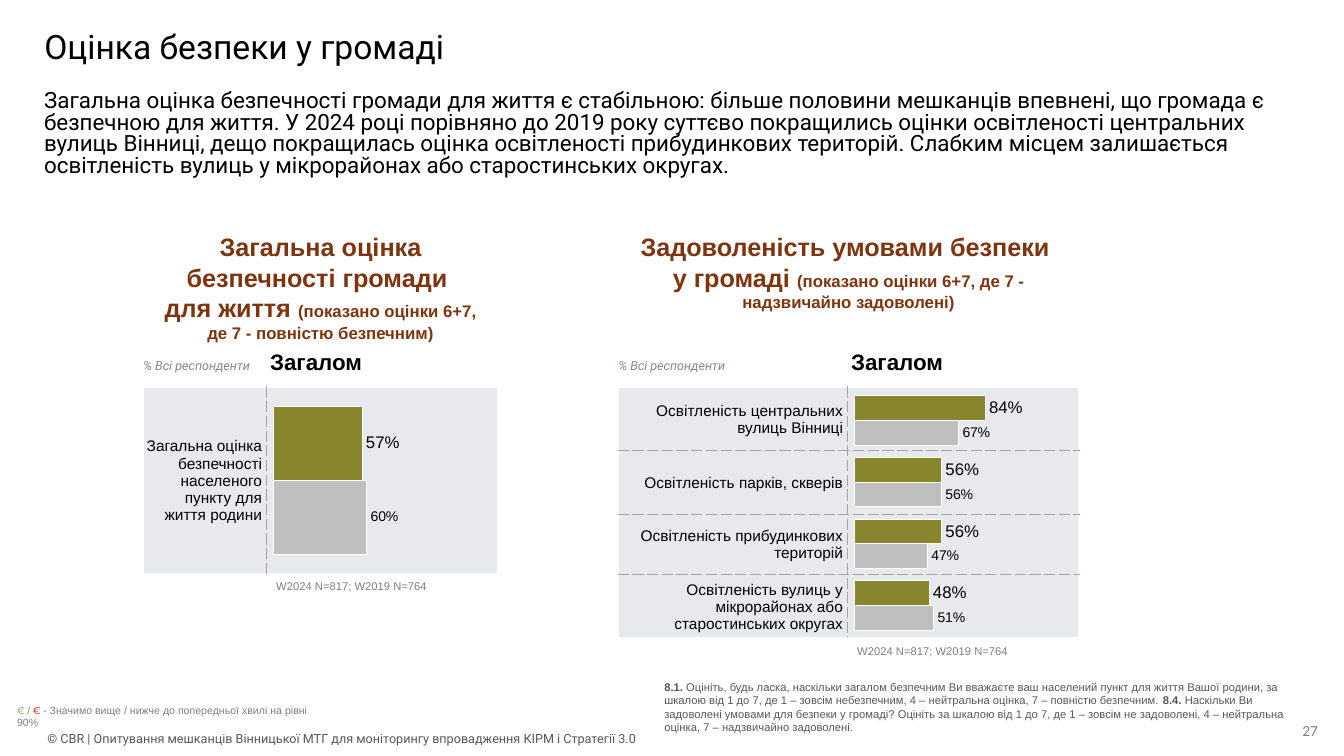
from lxml.etree import SubElement
from pptx import Presentation
from pptx.chart.data import CategoryChartData
from pptx.dml.color import RGBColor
from pptx.enum.chart import XL_CHART_TYPE, XL_LABEL_POSITION
from pptx.enum.shapes import MSO_SHAPE
from pptx.enum.text import MSO_ANCHOR, PP_ALIGN
from pptx.oxml import parse_xml
from pptx.oxml.ns import nsdecls, qn
from pptx.util import Inches, Pt

WIDE, HIGH = Inches(13.33), Inches(7.5)
COLORS = {
    "black": "000000", "white": "FFFFFF", "dark": "585858", "grey": "7F7F7F",
    "warm": "8E8581", "brown": "7F340D", "band": "E7E9EC", "dash": "A5A5A5",
    "olive": "87852D", "silver": "BFBFBF", "green": "6BAB4F", "red": "FF0000",
}
PAD = (0.1, 0.05, 0.1, 0.05)
FLAT = (0, 0, 0, 0)
NAME = (0.01, 0.01, 0.04, 0)


def color(key):
    return RGBColor.from_string(COLORS[key])


def place(left, top, width, height):
    return [round(share * side / 100) for share, side in
            zip((left, top, width, height), (WIDE, HIGH, WIDE, HIGH))]


def style(font, size, key="black", face="Arial", bold=False, italic=False):
    font.size, font.name = Pt(size), face
    font.bold, font.italic = bold, italic
    font.color.rgb = color(key)


def write(holder, parts, pad=PAD, align=PP_ALIGN.LEFT, anchor=MSO_ANCHOR.MIDDLE):
    frame = getattr(holder, "text_frame", holder)
    owner = holder if hasattr(holder, "margin_left") else frame
    owner.margin_left, owner.margin_top, owner.margin_right, owner.margin_bottom = map(Inches, pad)
    owner.vertical_anchor = anchor
    if owner is frame:
        frame.word_wrap = True
    para = frame.paragraphs[0]
    para.alignment = align
    for text, *look in parts:
        if text == "\v":
            para.add_line_break()
            continue
        run = para.add_run()
        run.text = text
        style(run.font, *look)
    return para


def label(slide, box, parts, **kwargs):
    return write(slide.shapes.add_textbox(*place(*box)), parts, **kwargs)


def border(cell, sides):
    props = cell._tc.get_or_add_tcPr()
    for spot, (side, inner) in enumerate(sides):
        key, width, dash = ("dash", 0.75, "lgDash") if inner else ("white", 1, "solid")
        props.insert(spot, parse_xml(
            f'<a:{side} {nsdecls("a")} w="{Pt(width)}"><a:solidFill>'
            f'<a:srgbClr val="{COLORS[key]}"/></a:solidFill>'
            f'<a:prstDash val="{dash}"/></a:{side}>'))


def table(slide, left, top, cols, rows):
    box = place(left, top, sum(cols), sum(rows))
    grid = slide.shapes.add_table(len(rows), len(cols), *box).table
    grid.first_row = grid.horz_banding = False
    for col, width in zip(grid.columns, cols):
        col.width = round(width * WIDE / 100)
    for row, height in zip(grid.rows, rows):
        row.height = round(height * HIGH / 100)
    return grid


def caption(slide, left, top, height, part, pad):
    cell = table(slide, left, top, [16.2], [height]).cell(0, 0)
    cell.fill.background()
    write(cell, [part], pad=pad)


def bands(slide, left, top, cols, rows, names):
    grid = table(slide, left, top, cols, rows)
    last = len(rows) - 1
    for r, name in enumerate(names):
        for c in range(2):
            cell = grid.cell(r, c)
            cell.fill.solid()
            cell.fill.fore_color.rgb = color("band")
            border(cell, [("lnL", c == 1), ("lnR", c == 0), ("lnT", r > 0), ("lnB", r < last)])
        write(grid.cell(r, 0), [(name, 11)], pad=NAME, align=PP_ALIGN.RIGHT)


def bars(slide, box, waves):
    data = CategoryChartData(number_format="0%")
    data.categories = [str(n + 1) for n in range(len(waves[0]))]
    for n, values in enumerate(waves, 1):
        data.add_series(f"Series {n}", values)
    chart = slide.shapes.add_chart(XL_CHART_TYPE.BAR_CLUSTERED, *place(*box), data).chart
    chart.has_legend = chart.has_title = False
    style(chart.font, 12)
    names, scale = chart.category_axis, chart.value_axis
    names.reverse_order = True
    names.visible = scale.visible = False
    scale.has_major_gridlines = False
    scale.minimum_scale, scale.maximum_scale = 0, 1.15
    plot = chart.plots[0]
    plot.gap_width, plot.vary_by_categories = 50, False
    for series, key, size in zip(plot.series, ("olive", "silver"), (12, 10)):
        series.format.fill.solid()
        series.format.fill.fore_color.rgb = color(key)
        series.format.line.color.rgb = color("white")
        series.format.line.width = Pt(0.75)
        marks = series.data_labels
        marks.show_value = True
        marks.number_format, marks.number_format_is_linked = "0%", False
        marks.position = XL_LABEL_POSITION.OUTSIDE_END
        style(marks.font, size)
    area = chart._chartSpace.chart.plotArea
    for old in area.findall(qn("c:layout")):
        area.remove(old)
    frame = parse_xml(f'<c:layout {nsdecls("c")}><c:manualLayout/></c:layout>')
    for tag, val in (("layoutTarget", "inner"), ("xMode", "edge"), ("yMode", "edge"),
                     ("x", 0.02), ("y", 0.03), ("w", 0.85), ("h", 0.96)):
        SubElement(frame[0], qn(f"c:{tag}")).set("val", str(val))
    area.insert(0, frame)


def panel(slide, left, top, side, rows, head, names, waves):
    cols = [side, 17.25]
    split = left + side
    first, second, small = head
    label(slide, (left, top, sum(cols), 13.5),
          [(first, 18, "brown", "Arial", True), ("\v",),
           (second, 18, "brown", "Arial", True), (small, 12, "brown", "Arial", True)],
          align=PP_ALIGN.CENTER, anchor=MSO_ANCHOR.TOP)
    label(slide, (left, top + 17.33, 8.25, 2),
          [("% Всі респонденти", 9, "warm", "Roboto", False, True)],
          pad=FLAT, anchor=MSO_ANCHOR.TOP)
    bands(slide, left, top + 21.2, cols, rows, names)
    start, tall = top + 20.53, sum(rows) + 0.8
    bars(slide, (split + 0.22, start, 15.68, tall), waves)
    caption(slide, split + 0.22, top + 15.33, 5.2,
            ("Загалом", 16, "black", "Arial", True), (0.01, 0.01, 0.01, 0))
    caption(slide, split, start + tall, 3.2, ("W2024 N=817; W2019 N=764", 8, "grey"), PAD)


def header(slide):
    title = slide.shapes.title
    title.left, title.top, title.width, title.height = place(2.55, 1.6, 85.82, 9.73)
    write(title, [("Оцінка безпеки у громаді", 24, "black", "Roboto")]).line_spacing = 0.9
    label(slide, (2.55, 11.33, 95.35, 12.93), [(
        "Загальна оцінка безпечності громади для життя є стабільною: більше половини мешканців "
        "впевнені, що громада є безпечною для життя. У 2024 році порівняно до 2019 року суттєво "
        "покращились оцінки освітленості центральних вулиць Вінниці, дещо покращилась оцінка "
        "освітленості прибудинкових територій. Слабким місцем залишається освітленість вулиць "
        "у мікрорайонах або старостинських округах.", 16, "black", "Roboto")]).line_spacing = 0.8


def footer(slide):
    strip = slide.shapes.add_shape(MSO_SHAPE.RECTANGLE, *place(3.53, 96.27, 77.2, 2.8))
    strip.shadow.inherit = False
    strip.fill.solid()
    strip.fill.fore_color.rgb = color("white")
    strip.line.fill.background()
    write(strip, [("© CBR | Опитування мешканців Вінницької МТГ для моніторингу впровадження "
                   "КІРМ і Стратегії 3.0", 9, "dark", "Roboto")], pad=FLAT)
    note = label(slide, (47.19, 89.33, 49.21, 8.53), [
        ("8.1. ", 8, "dark", "Arial", True),
        ("Оцініть, будь ласка, наскільки загалом безпечним Ви вважаєте ваш населений пункт для "
         "життя Вашої родини, за шкалою від 1 до 7, де 1 – зовсім небезпечним, 4 – нейтральна "
         "оцінка, 7 – повністю безпечним. ", 8, "dark"),
        ("8.4. ", 8, "dark", "Arial", True),
        ("Наскільки Ви задоволені умовами для безпеки у громаді? Оцініть за шкалою від 1 до 7, "
         "де 1 – зовсім не задоволені, 4 – нейтральна оцінка, 7 – надзвичайно задоволені.",
         8, "dark")], anchor=MSO_ANCHOR.TOP)
    note._p.get_or_add_pPr().set("marL", str(Inches(0.2)))
    label(slide, (95.72, 94.67, 3.53, 3.87), [("27", 11, "grey", "Calibri")],
          pad=(0.13, 0.07, 0.13, 0.07), align=PP_ALIGN.CENTER)
    label(slide, (0.53, 93.2, 24.08, 3.07), [
        ("€ ", 7, "green", "Montserrat"), ("/", 7.5, "grey"), (" ", 7, "green", "Montserrat"),
        ("€ ", 7, "red", "Montserrat"),
        ("- Значимо вище / нижче до попередньої хвилі на рівні 90%", 7.5, "grey")])


def main():
    deck = Presentation()
    deck.slide_width, deck.slide_height = WIDE, HIGH
    slide = deck.slides.add_slide(deck.slide_layouts[5])
    header(slide)
    footer(slide)
    panel(slide, 10.65, 30, 9.15, [24.67],
          ("Загальна оцінка безпечності громади ", "для життя ",
           "(показано оцінки 6+7, де 7 - повністю безпечним)"),
          ["Загальна оцінка безпечності населеного пункту для життя родини"],
          [[0.57], [0.6]])
    panel(slide, 46, 30, 17.03, [8.4, 8.4, 8, 8.4],
          ("Задоволеність умовами безпеки ", "у громаді ",
           "(показано оцінки 6+7, де 7 - надзвичайно задоволені)"),
          ["Освітленість центральних вулиць Вінниці", "Освітленість парків, скверів",
           "Освітленість прибудинкових територій",
           "Освітленість вулиць у мікрорайонах або старостинських округах"],
          [[0.84, 0.56, 0.56, 0.48], [0.67, 0.56, 0.47, 0.51]])
    deck.save("out.pptx")


if __name__ == "__main__":
    main()
